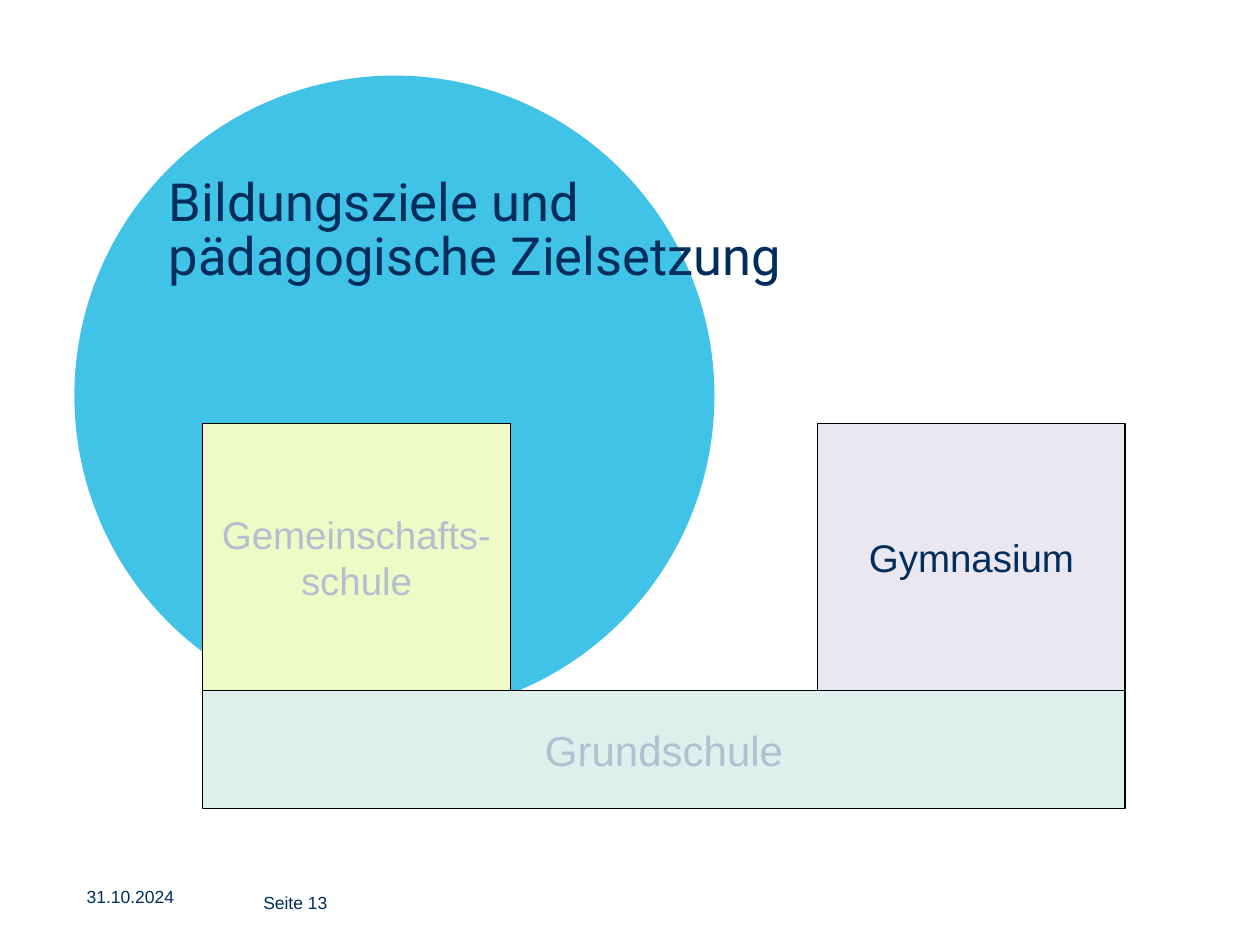
import pptx
import pptx.dml.color
import pptx.enum.shapes
import pptx.enum.text
import pptx.util
from lxml import etree
from pptx.util import Inches

NAVY = "002D5B"
MUTED = "B5BED1"
LEFT, TOP = 1.61, 3.36
WIDTH, SCHOOL_W = 7.32, 2.44
SCHOOL_H, BASE_H = 2.12, 0.94


def color(value):
    return pptx.dml.color.RGBColor.from_string(value)


def write(tf, text, size, hue=NAVY, font="Arial", align="LEFT", anchor="TOP",
          inset=None, wrap=True, spacing=None):
    tf.word_wrap = wrap
    tf.auto_size = pptx.enum.text.MSO_AUTO_SIZE.NONE
    tf.vertical_anchor = getattr(pptx.enum.text.MSO_ANCHOR, anchor)
    if inset is not None:
        tf.margin_left = tf.margin_right = Inches(inset)
        tf.margin_top = tf.margin_bottom = Inches(inset)
    p = tf.paragraphs[0]
    p.text = text
    p.alignment = getattr(pptx.enum.text.PP_ALIGN, align)
    if spacing:
        p.line_spacing = spacing
    for r in p.runs:
        r.font.name = font
        r.font.size = pptx.util.Pt(size)
        r.font.color.rgb = color(hue)


def add_label(s, text, x, y, w, h, **fmt):
    sp = s.shapes.add_textbox(Inches(x), Inches(y), Inches(w), Inches(h))
    write(sp.text_frame, text, 10, **fmt)


def add_filled(s, kind, x, y, w, h, fill):
    sp = s.shapes.add_shape(getattr(pptx.enum.shapes.MSO_SHAPE, kind),
                            Inches(x), Inches(y), Inches(w), Inches(h))
    sp.shadow.inherit = False
    sp.fill.solid()
    sp.fill.fore_color.rgb = color(fill)
    return sp


def add_box(s, text, x, y, w, h, fill, size, hue):
    sp = add_filled(s, "RECTANGLE", x, y, w, h, fill)
    sp.line.color.rgb = color("000000")
    sp.line.width = pptx.util.Pt(0.75)
    write(sp.text_frame, text, size, hue=hue, align="CENTER",
          anchor="MIDDLE", wrap=False)


def add_circle(s):
    sp = add_filled(s, "OVAL", 0.59, 0.6, 5.08, 5.08, "00B0DF")
    sp.line.fill.background()
    clr = sp.element.spPr.find(".//" + pptx.oxml.ns.qn("a:srgbClr"))
    etree.SubElement(clr, pptx.oxml.ns.qn("a:alpha"), val="75000")
    s.shapes.title.element.addprevious(sp.element)


def add_title(s, text):
    sp = s.shapes.title
    sp.left, sp.top = Inches(1.34), Inches(1.23)
    sp.width, sp.height = Inches(8.07), Inches(1.04)
    write(sp.text_frame, text, 30, font="Roboto", anchor="BOTTOM",
          inset=0, spacing=0.85)


def main():
    prs = pptx.Presentation()
    prs.slide_width, prs.slide_height = Inches(10), Inches(7.5)
    s = prs.slides.add_slide(prs.slide_layouts[5])
    add_circle(s)
    add_title(s, "Bildungsziele und\vpädagogische Zielsetzung")
    add_label(s, "Seite 13", 2.09, 7.04, 1.26, 0.24, anchor="MIDDLE", inset=0)
    add_label(s, "31.10.2024", 0.59, 6.98, 1.26, 0.24)
    add_box(s, "Grundschule", LEFT, TOP + SCHOOL_H, WIDTH, BASE_H,
            "DDF0EC", 24, MUTED)
    add_box(s, "Gymnasium", LEFT + WIDTH - SCHOOL_W, TOP, SCHOOL_W, SCHOOL_H,
            "EBE7F1", 22, NAVY)
    add_box(s, "Gemeinschafts-\vschule", LEFT, TOP, SCHOOL_W, SCHOOL_H,
            "EFFBC6", 22, MUTED)
    prs.save("out.pptx")


if __name__ == "__main__":
    main()
